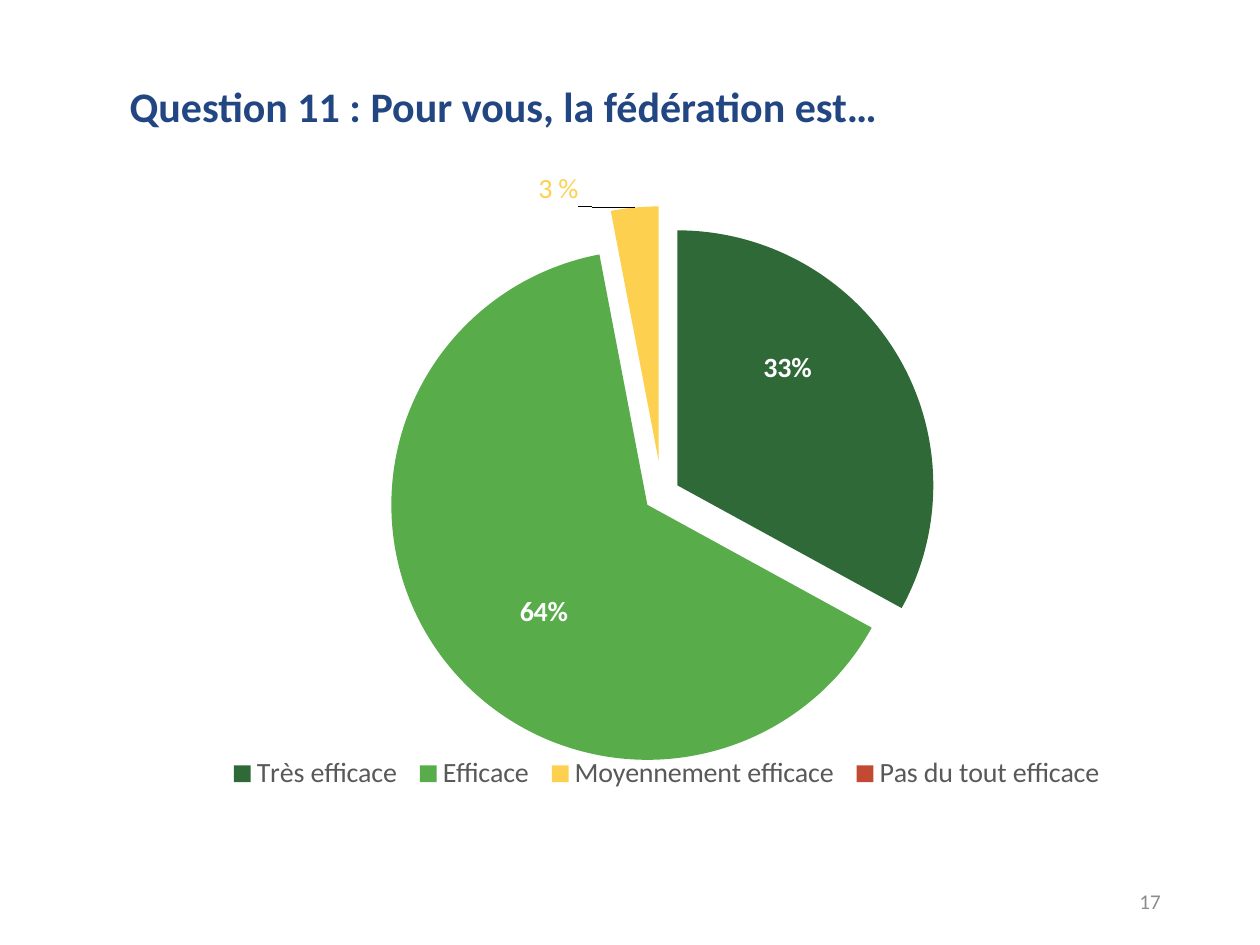
from lxml import etree
from pptx import Presentation
from pptx.chart.data import CategoryChartData
from pptx.dml.color import RGBColor
from pptx.enum.chart import XL_CHART_TYPE, XL_LABEL_POSITION, XL_LEGEND_POSITION
from pptx.enum.text import MSO_ANCHOR, PP_ALIGN
from pptx.oxml.ns import qn
from pptx.util import Pt

PIE = XL_CHART_TYPE.PIE
BOTTOM = XL_LEGEND_POSITION.BOTTOM
CENTER, OUTSIDE = XL_LABEL_POSITION.CENTER, XL_LABEL_POSITION.OUTSIDE_END
MIDDLE, TOP = MSO_ANCHOR.MIDDLE, MSO_ANCHOR.TOP
LEFT, RIGHT = PP_ALIGN.LEFT, PP_ALIGN.RIGHT

COLORS = {
    "title": "224682", "number": "8C8C8C", "legend": "595959", "white": "FFFFFF",
    "dark green": "2F6937", "green": "58AC4A", "yellow": "FED050", "red": "C24A32",
}


def style_font(font, size, color, bold=False):
    for name, value in {"name": "Calibri", "size": Pt(size), "bold": bold}.items():
        setattr(font, name, value)
    font.color.rgb = RGBColor.from_string(COLORS[color])


def place(parent, index, **values):
    """Give a chart part a manual layout, as fractions of the chart."""
    for old in parent.findall(qn("c:layout")):
        parent.remove(old)
    layout = etree.Element(qn("c:layout"))
    manual = etree.SubElement(layout, qn("c:manualLayout"))
    for tag, value in values.items():
        etree.SubElement(manual, qn(f"c:{tag}")).set("val", str(value))
    parent.insert(index, layout)


presentation = Presentation()
presentation.slide_width, presentation.slide_height = Pt(720), Pt(540)
slide = presentation.slides.add_slide(presentation.slide_layouts[6])

# Pie chart
data = CategoryChartData(number_format="0%")
data.categories = ["Très efficace", "Efficace", "Moyennement efficace", "Pas du tout efficace"]
data.add_series("Series 1", (0.33, 0.64, 0.03, 0))
chart = slide.shapes.add_chart(PIE, Pt(115.2), Pt(95), Pt(531.4), Pt(377.3), data).chart
chart.has_title = False
style_font(chart.font, 10, "legend")
place(chart.plots[0]._element.getparent(), 0, layoutTarget="inner", xMode="edge",
      yMode="edge", x=0.2, y=0.08, w=0.59, h=0.83)

# Legend
chart.has_legend = True
legend = chart.legend
legend.position = BOTTOM
legend.include_in_layout = False
style_font(legend.font, 16, "legend")
place(legend._element, 1, xMode="edge", yMode="edge", x=0.02, y=0.89, w=0.96, h=0.06)

# Slices
plot = chart.plots[0]
plot.vary_by_categories = True
series = plot.series[0]
for index, color in enumerate(["dark green", "green", "yellow", "red"]):
    fill = series.points[index].format.fill
    fill.solid()
    fill.fore_color.rgb = RGBColor.from_string(COLORS[color])
explosion = etree.Element(qn("c:explosion"))
explosion.set("val", "7")
series._element.find(qn("c:dPt")).addprevious(explosion)
for point, amount in zip(series._element.findall(qn("c:dPt")), (7, 7, 13, 7)):
    explosion = etree.Element(qn("c:explosion"))
    explosion.set("val", str(amount))
    point.find(qn("c:spPr")).addprevious(explosion)

# Value labels
labels = series.data_labels
labels.show_value = True
labels.number_format = "0%"
labels.number_format_is_linked = False
style_font(labels.font, 16, "white", True)
label_formats = [
    (CENTER, "white", True, 0, -0.08),
    (CENTER, "white", True, 0, 0.05),
    (OUTSIDE, "yellow", False, -0.06, 0.01),
]
for index, (position, color, bold, x, y) in enumerate(label_formats):
    label = series.points[index].data_label
    if position == OUTSIDE:
        paragraph = label.text_frame.paragraphs[0]
        run = paragraph.add_run()
        run.text = "3 %"
        style_font(run.font, 16, color, bold)
    else:
        style_font(label.font, 16, color, bold)
    label.position = position
    element = labels._element.findall(qn("c:dLbl"))[index]
    place(element, 1, x=x, y=y)
    if position == CENTER:
        number_format = etree.Element(qn("c:numFmt"))
        number_format.set("formatCode", "0%")
        number_format.set("sourceLinked", "0")
        element.insert(2, number_format)

# The empty slice has no label
empty_label = etree.Element(qn("c:dLbl"))
etree.SubElement(empty_label, qn("c:idx")).set("val", "3")
etree.SubElement(empty_label, qn("c:delete")).set("val", "1")
labels._element.findall(qn("c:dLbl"))[-1].addnext(empty_label)

# Page number and title
texts = [
    ("17", (508.3, 500.4, 162, 28.8), 12, "number", False, RIGHT, MIDDLE),
    ("Question 11 : Pour vous, la fédération est…", (67, 42.5, 476, 36), 24, "title", True, LEFT, TOP),
]
for text, box, size, color, bold, alignment, anchor in texts:
    frame = slide.shapes.add_textbox(*map(Pt, box)).text_frame
    frame.word_wrap = True
    frame.vertical_anchor = anchor
    paragraph = frame.paragraphs[0]
    paragraph.alignment = alignment
    run = paragraph.add_run()
    run.text = text
    style_font(run.font, size, color, bold)

presentation.save("out.pptx")
